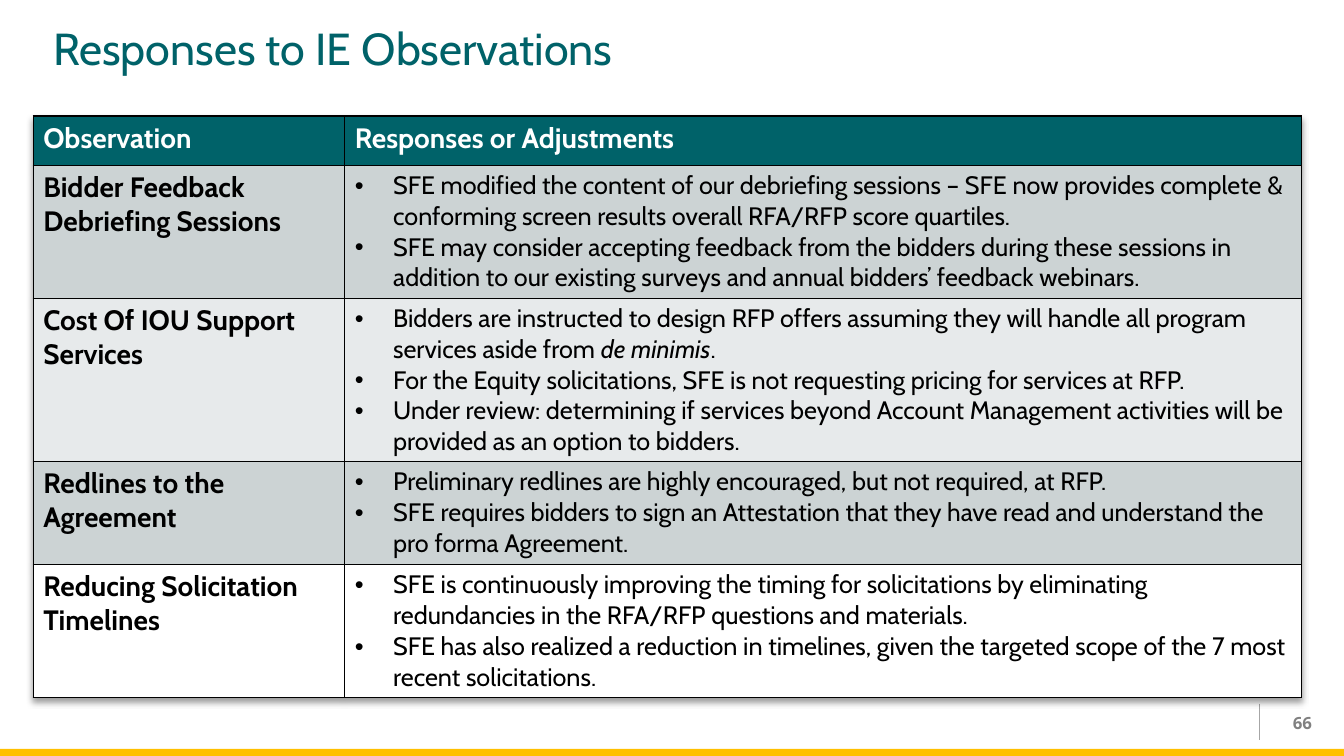
from dataclasses import dataclass
from lxml.etree import SubElement, fromstring
from pptx import Presentation
from pptx.dml.color import RGBColor
from pptx.enum.shapes import MSO_CONNECTOR, MSO_SHAPE
from pptx.enum.text import MSO_ANCHOR, PP_ALIGN
from pptx.oxml.ns import nsdecls, qn
from pptx.util import Inches, Pt


@dataclass(frozen=True)
class Theme:
    teal: str = "006269"
    gold: str = "FFC000"
    rule: str = "A6A6A6"
    gray: str = "808080"
    dark: str = "CCD3D4"
    light: str = "E7EAEB"
    white: str = "FFFFFF"
    black: str = "000000"
    font: str = "Cabin"
    mono: str = "Open Sans"
    title: int = 32
    head: int = 20
    body: int = 18
    page: int = 12


THEME = Theme()
WIDE, HIGH = 13.33, 7.5
HEADS = ("Observation", "Responses or Adjustments")
COLS = (3.09, 9.49)
TOP_ROW = 0.49

# Row label, fill, height, bullets; asterisks enclose italics
ROWS = [
    ("Bidder Feedback Debriefing Sessions", THEME.dark, 1.32, [
        "SFE modified the content of our debriefing sessions – SFE now provides complete & "
        "conforming screen results overall RFA/RFP score quartiles.",
        "SFE may consider accepting feedback from the bidders during these sessions in "
        "addition to our existing surveys and annual bidders’ feedback webinars."]),
    ("Cost Of IOU Support Services", THEME.light, 1.62, [
        "Bidders are instructed to design RFP offers assuming they will handle all program "
        "services aside from *de minimis*.",
        "For the Equity solicitations, SFE is not requesting pricing for services at RFP.",
        "Under review: determining if services beyond Account Management activities will be "
        "provided as an option to bidders."]),
    ("Redlines to the Agreement", THEME.dark, 1.02, [
        "Preliminary redlines are highly encouraged, but not required, at RFP.",
        "SFE requires bidders to sign an Attestation that they have read and understand the "
        "pro forma Agreement."]),
    ("Reducing Solicitation Timelines", THEME.white, 1.32, [
        "SFE is continuously improving the timing for solicitations by eliminating "
        "redundancies in the RFA/RFP questions and materials.",
        "SFE has also realized a reduction in timelines, given the targeted scope of the 7 most "
        "recent solicitations."]),
]


def color(code):
    return RGBColor.from_string(code)


def write(para, text, size=THEME.body, ink=THEME.black, font=THEME.font,
          bold=False, align=None, space=None, bullet=False):
    """Fill one paragraph; text between asterisks turns italic."""
    para.alignment = align
    para.line_spacing = space
    for i, part in enumerate(text.split("*")):
        run = para.add_run()
        run.text = part
        run.font.size, run.font.name = Pt(size), font
        run.font.bold, run.font.italic = bold, i % 2 == 1
        run.font.color.rgb = color(ink)
    if bullet:
        props = para._p.get_or_add_pPr()
        props.set("marL", str(Inches(0.38)))
        props.set("indent", str(-Inches(0.38)))
        SubElement(props, qn("a:buFont")).set("typeface", "Arial")
        SubElement(props, qn("a:buChar")).set("char", "•")


def label(slide, box, text, **style):
    frame = slide.shapes.add_textbox(*map(Inches, box)).text_frame
    frame.word_wrap = True
    frame.vertical_anchor = MSO_ANCHOR.MIDDLE
    write(frame.paragraphs[0], text, **style)


def paint(cell, fill):
    """Give a cell its fill and thin black borders."""
    props = cell._tc.get_or_add_tcPr()
    for side in ("lnL", "lnR", "lnT", "lnB"):
        props.append(fromstring(
            f'<a:{side} {nsdecls("a")} w="{Pt(1)}"><a:solidFill>'
            f'<a:srgbClr val="{THEME.black}"/></a:solidFill></a:{side}>'))
    cell.fill.solid()
    cell.fill.fore_color.rgb = color(fill)


def shade(table):
    """Cast a soft shadow below the table."""
    table._tbl.tblPr.insert(0, fromstring(
        f'<a:effectLst {nsdecls("a")}><a:outerShdw blurRad="{Pt(4)}" dist="{Pt(3)}" '
        f'dir="5400000" algn="t" rotWithShape="0"><a:srgbClr val="{THEME.black}">'
        '<a:alpha val="40000"/></a:srgbClr></a:outerShdw></a:effectLst>'))


def grid(slide, left, top):
    tall = [TOP_ROW] + [row[2] for row in ROWS]
    box = (left, top, sum(COLS), sum(tall))
    table = slide.shapes.add_table(len(tall), len(COLS), *map(Inches, box)).table
    for col, width in zip(table.columns, COLS):
        col.width = Inches(width)
    for row, height in zip(table.rows, tall):
        row.height = Inches(height)
    shade(table)

    # Header row
    for i, text in enumerate(HEADS):
        cell = table.cell(0, i)
        paint(cell, THEME.teal)
        write(cell.text_frame.paragraphs[0], text, size=THEME.head,
              ink=THEME.white, bold=True)

    # Observations and their responses
    for i, (name, fill, _, points) in enumerate(ROWS, 1):
        first, second = table.cell(i, 0), table.cell(i, 1)
        paint(first, fill)
        paint(second, fill)
        write(first.text_frame.paragraphs[0], name, size=THEME.head, bold=True)
        frame = second.text_frame
        for j, point in enumerate(points):
            para = frame.add_paragraph() if j else frame.paragraphs[0]
            write(para, point, bullet=True)


def footer(slide, left, top, width, height):
    # Divider beside the page number
    x = left + width - 0.84
    line = slide.shapes.add_connector(
        MSO_CONNECTOR.STRAIGHT, *map(Inches, (x, top + 0.01, x, top + 0.37)))
    line.line.color.rgb = color(THEME.rule)
    line.line.width = Pt(1)
    SubElement(line._element.spPr, qn("a:effectLst"))

    # Gold base strip
    strip = slide.shapes.add_shape(
        MSO_SHAPE.RECTANGLE, *map(Inches, (left, top + height - 0.07, width, 0.07)))
    strip.shadow.inherit = False
    strip.fill.solid()
    strip.fill.fore_color.rgb = color(THEME.gold)
    strip.line.fill.background()

    # Page number
    label(slide, (left + width - 0.97, top, 0.75, 0.4), "66", size=THEME.page,
          ink=THEME.gray, font=THEME.mono, bold=True, align=PP_ALIGN.RIGHT)


def main():
    deck = Presentation()
    deck.slide_width, deck.slide_height = Inches(WIDE), Inches(HIGH)
    slide = deck.slides.add_slide(deck.slide_layouts[6])
    footer(slide, 0, 6.97, WIDE, HIGH - 6.97)
    grid(slide, 0.33, 1.15)
    label(slide, (0.43, -0.22, 11.5, 1.45), "Responses to IE Observations",
          size=THEME.title, ink=THEME.teal, space=0.9)
    deck.save("out.pptx")


if __name__ == "__main__":
    main()
